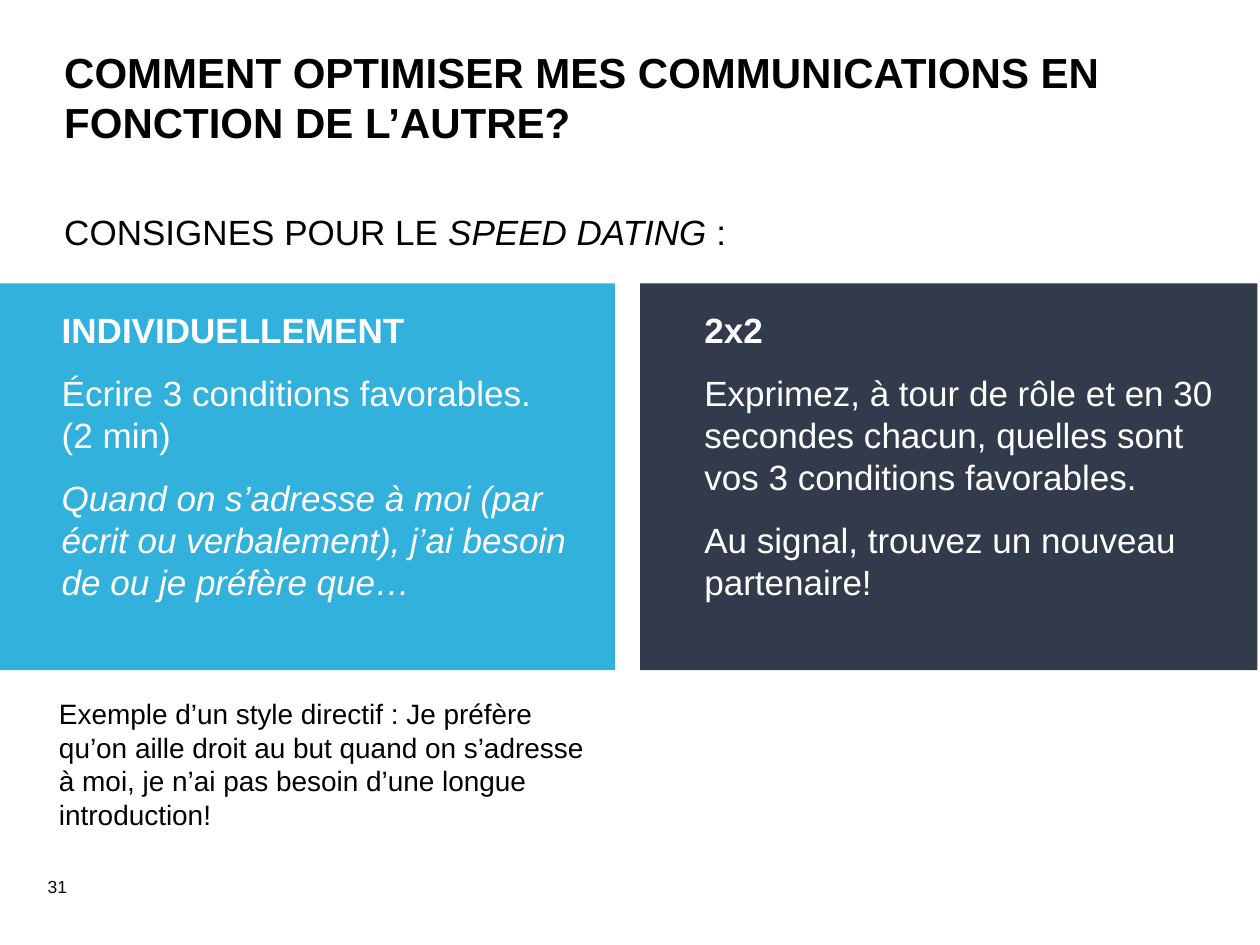
from pptx import Presentation
from pptx.dml.color import RGBColor
from pptx.enum import shapes, text
from pptx.oxml.ns import qn
from pptx.util import Inches, Pt

BLACK = RGBColor(0x00, 0x00, 0x00)
NUMBER_GRAY = RGBColor(0x0C, 0x0C, 0x0C)
WHITE = RGBColor(0xFF, 0xFF, 0xFF)
BLUE = RGBColor(0x33, 0xB1, 0xDD)
NAVY = RGBColor(0x31, 0x3B, 0x4B)

# Content: a paragraph is a list of (text, style) runs
TITLE = [[("COMMENT OPTIMISER MES COMMUNICATIONS EN FONCTION DE L’AUTRE?", "bold")]]
INSTRUCTIONS = [[("CONSIGNES POUR LE ", ""), ("SPEED DATING", "italic"), (" :", "")]]
PANELS = [
    (BLUE, [
        [("INDIVIDUELLEMENT", "bold")],
        [("Écrire 3 conditions favorables.\n(2 min)", "")],
        [("Quand on s’adresse à moi (par écrit ou verbalement), "
          "j’ai besoin de ou je préfère que…", "italic")],
    ]),
    (NAVY, [
        [("2x2", "bold")],
        [("Exprimez, à tour de rôle et en 30 secondes chacun, "
          "quelles sont vos 3 conditions favorables.", "")],
        [("Au signal, trouvez un nouveau partenaire!", "")],
    ]),
]
EXAMPLE = [[("Exemple d’un style directif : Je préfère qu’on aille droit au but quand "
             "on s’adresse à moi, je n’ai pas besoin d’une longue introduction!", "")]]
SLIDE_NUMBER = [[("31", "")]]

# Layout in inches
PANEL_LEFT, PANEL_TOP, PANEL_WIDTH, PANEL_HEIGHT = -0.02, 2.25, 4.9, 3.07
PANEL_STEP = 5.1


def write_text(shape, paragraphs, size, color=BLACK, indent=0, gap=0,
               margins=(0.1, 0.05, 0.1, 0.05), anchor=text.MSO_ANCHOR.TOP):
    frame = shape.text_frame
    frame.word_wrap = True
    frame.auto_size = text.MSO_AUTO_SIZE.NONE
    frame.vertical_anchor = anchor
    (frame.margin_left, frame.margin_top,
     frame.margin_right, frame.margin_bottom) = map(Inches, margins)
    for index, runs in enumerate(paragraphs):
        paragraph = frame.paragraphs[0] if index == 0 else frame.add_paragraph()
        properties = paragraph._p.get_or_add_pPr()
        properties.set("marL", str(Inches(indent)))
        properties.set("indent", "0")
        properties.append(properties.makeelement(qn("a:buNone"), {}))
        paragraph.alignment = text.PP_ALIGN.LEFT
        paragraph.space_before = Pt(gap if index else 0)
        for words, style in runs:
            for line_index, line in enumerate(words.split("\n")):
                if line_index:
                    paragraph.add_line_break()
                run = paragraph.add_run()
                run.text = line
                font = run.font
                font.name, font.size = "Arial", Pt(size)
                font.bold, font.italic = style == "bold", style == "italic"
                font.color.rgb = color


def place(shape, left, top, width, height):
    shape.left, shape.top = Inches(left), Inches(top)
    shape.width, shape.height = Inches(width), Inches(height)


def main():
    presentation = Presentation()
    presentation.slide_width, presentation.slide_height = Inches(10), Inches(7.5)
    slide = presentation.slides.add_slide(presentation.slide_layouts[1])

    # Title and instructions
    title, body = slide.shapes.title, slide.placeholders[1]
    place(title, 0.41, 0.31, 9, 0.92)
    write_text(title, TITLE, 24, anchor=text.MSO_ANCHOR.MIDDLE)
    place(body, 0.41, 1.62, 9, 0.79)
    write_text(body, INSTRUCTIONS, 20)

    # Slide number
    number = slide.shapes.add_textbox(Inches(0.28), Inches(6.9), Inches(2.33), Inches(0.4))
    write_text(number, SLIDE_NUMBER, 10, color=NUMBER_GRAY)

    # Side-by-side panels
    for column, (fill, paragraphs) in enumerate(PANELS):
        panel = slide.shapes.add_shape(
            shapes.MSO_SHAPE.RECTANGLE, Inches(PANEL_LEFT + column * PANEL_STEP),
            Inches(PANEL_TOP), Inches(PANEL_WIDTH), Inches(PANEL_HEIGHT))
        panel.shadow.inherit = False
        panel.fill.solid()
        panel.fill.fore_color.rgb = fill
        panel.line.fill.background()
        write_text(panel, paragraphs, 20, color=WHITE, indent=0.39, gap=12,
                   margins=(0.12, 0.2, 0.12, 0))

    # Example below the first panel
    example = slide.shapes.add_textbox(Inches(0.28), Inches(5.48), Inches(4.57), Inches(1.57))
    write_text(example, EXAMPLE, 16, indent=0.09)

    presentation.save("out.pptx")


if __name__ == "__main__":
    main()
